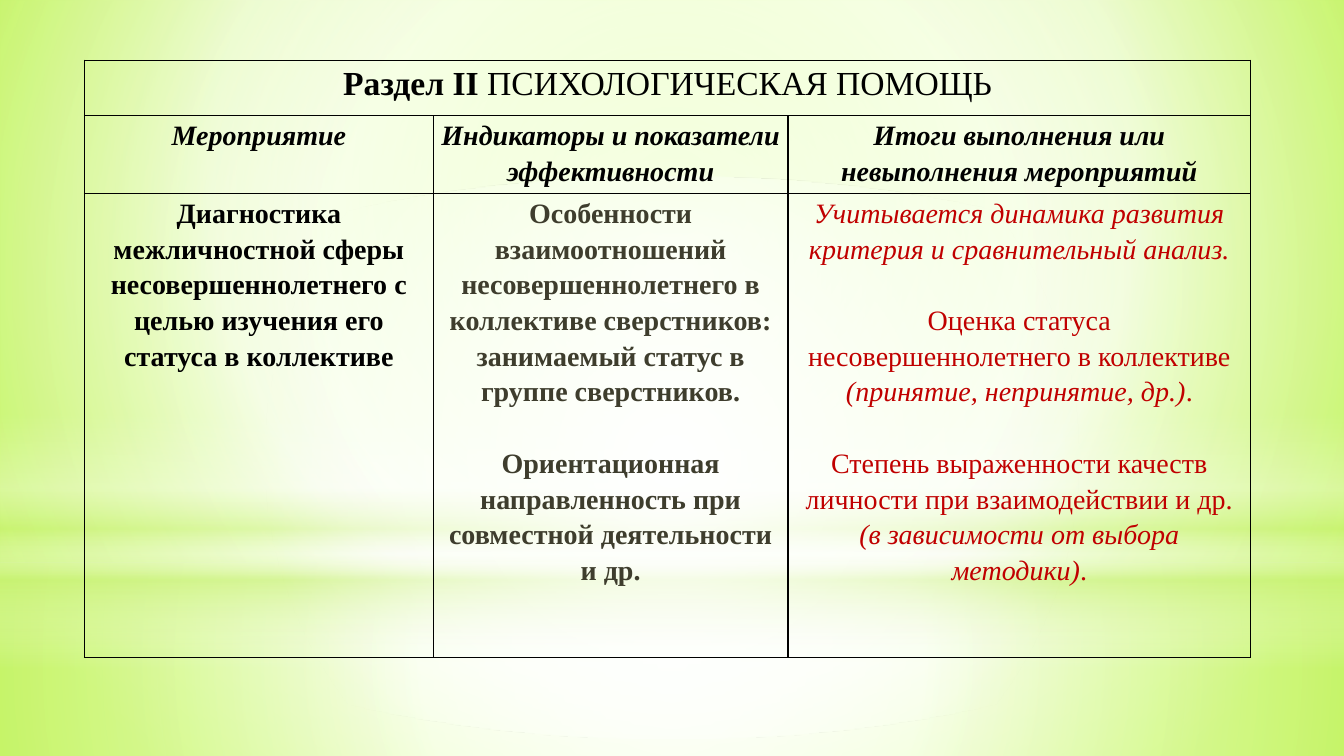
"""Builds a slide with a three-column table on psychological support."""
import pptx
import pptx.dml.color
import pptx.enum.shapes
import pptx.enum.text
import pptx.oxml
import pptx.oxml.ns
import pptx.util

Cm, Pt = pptx.util.Cm, pptx.util.Pt
SHAPE = pptx.enum.shapes.MSO_SHAPE

WIDTH, HEIGHT = 33.87, 19.05
FONT = "Times New Roman"
BLACK, GREY, RED = "000000", "3E3D2D", "C00000"
BLANK_LINE = 25.5

CIRCLE = '<a:path path="circle"><a:fillToRect l="{}000" t="{}000" r="{}000" b="{}000"/></a:path>'
CENTRE = CIRCLE.format(50, 50, 50, 50)
DOWN = '<a:lin ang="5400000" scaled="0"/>'

BACKDROP = [(0, "CAFF60", 100), (60, "F7FFE7", 100), (100, "B7FF29", 100)]
GLOWS = [
    (SHAPE.RECTANGLE, 14.17, 4.88, CENTRE,
     [(0, "FFFFFF", 91), (37, "FFFFFF", 76), (100, "CAF278", 79)]),
    (SHAPE.RECTANGLE, 0, 14.17, CENTRE,
     [(0, "FFFFFF", 89), (48, "FFFFFF", 62), (100, "CAF278", 79)]),
    (SHAPE.RECTANGLE, 10.46, 6.35, DOWN,
     [(0, "FFFFFF", 0), (29, "FFFFFF", 30), (45, "CAF278", 40),
      (55, "FFFFFF", 26), (65, "CAF278", 60), (100, "FFFFFF", 0)]),
    (SHAPE.OVAL, 4.45, 14.17, CENTRE, [(0, "FFFFFF", 100), (56, "FFFFFF", 0)]),
]

LEFT, TOP = 2.13, 1.52
COLS = [8.79, 8.94, 11.66]
ROWS = [1.4, 1.96, 11.68]

# Each cell: size, colour, paragraphs; each paragraph: blank line above, runs of (text, style).
CELLS = {
    (0, 0): (24, BLACK, [(False, [("Раздел II ", "b"), ("ПСИХОЛОГИЧЕСКАЯ ПОМОЩЬ", "")])]),
    (1, 0): (20, BLACK, [(False, [("Мероприятие", "bi")])]),
    (1, 1): (20, BLACK, [(False, [("Индикаторы и показатели эффективности", "bi")])]),
    (1, 2): (20, BLACK, [(False, [("Итоги выполнения или невыполнения мероприятий", "bi")])]),
    (2, 0): (20, BLACK, [
        (False, [("Диагностика межличностной сферы несовершеннолетнего "
                  "с целью изучения его статуса в коллективе", "b")])]),
    (2, 1): (20, GREY, [
        (False, [("Особенности взаимоотношений несовершеннолетнего "
                  "в коллективе сверстников:", "b")]),
        (False, [("занимаемый статус в группе сверстников.", "b")]),
        (True, [("Ориентационная направленность при совместной деятельности", "b")]),
        (False, [("и др.", "b")])]),
    (2, 2): (20, RED, [
        (False, [("Учитывается динамика развития критерия и сравнительный анализ.", "i")]),
        (True, [("Оценка статуса несовершеннолетнего в коллективе ", ""),
                ("(принятие, непринятие, др.)", "i"), (".", "")]),
        (True, [("Степень выраженности качеств личности при взаимодействии и др. ", ""),
                ("(в зависимости от выбора методики)", "i"), (".", "")])]),
}


def rgb(color):
    """Return the colour for a hex string."""
    return pptx.dml.color.RGBColor.from_string(color)


def xml(tag, attrs, body):
    """Return a drawing element."""
    ns = pptx.oxml.ns.nsdecls("a")
    return pptx.oxml.parse_xml(f"<a:{tag} {ns} {attrs}>{body}</a:{tag}>")


def set_gradient(fill, element, stops, direction):
    """Fill the element with a gradient."""
    fill.solid()
    fill.fore_color.rgb = rgb(stops[0][1])
    gs = "".join(f'<a:gs pos="{pos * 1000}"><a:srgbClr val="{color}">'
                 f'<a:alpha val="{alpha * 1000}"/></a:srgbClr></a:gs>'
                 for pos, color, alpha in stops)
    solid = next(element.iter(pptx.oxml.ns.qn("a:solidFill")))
    solid.getparent().replace(
        solid, xml("gradFill", 'rotWithShape="1"', f"<a:gsLst>{gs}</a:gsLst>{direction}"))


def set_borders(cell):
    """Draw a thin black line on every side of the cell."""
    cell.fill.background()
    tc_pr = cell._tc.get_or_add_tcPr()
    for i, side in enumerate("LRTB"):
        tc_pr.insert(i, xml(f"ln{side}", 'w="12700"',
                            f'<a:solidFill><a:srgbClr val="{BLACK}"/></a:solidFill>'))


def set_text(cell, size, color, paragraphs):
    """Write centred paragraphs into the cell."""
    cell.margin_left = cell.margin_right = Cm(0.18)
    cell.margin_top = cell.margin_bottom = 0
    tf = cell.text_frame
    for i, (gap, runs) in enumerate(paragraphs):
        p = tf.paragraphs[0] if i == 0 else tf.add_paragraph()
        p.alignment = pptx.enum.text.PP_ALIGN.CENTER
        p.line_spacing = 1.15
        if gap:
            p.space_before = Pt(BLANK_LINE)
        p.font.name, p.font.size = FONT, Pt(size)
        p.font.color.rgb = rgb(color)
        for text, style in runs:
            r = p.add_run()
            r.text = text
            font = p.font if len(runs) == 1 else r.font
            font.bold, font.italic = "b" in style, "i" in style


def main():
    """Build and save the slide."""
    prs = pptx.Presentation()
    prs.slide_width, prs.slide_height = Cm(WIDTH), Cm(HEIGHT)
    s = prs.slides.add_slide(prs.slide_layouts[6])
    set_gradient(s.background.fill, s.element, BACKDROP, CIRCLE.format(20, 10, 20, 60))

    for kind, top, height, direction, stops in GLOWS:
        sp = s.shapes.add_shape(kind, 0, Cm(top), Cm(WIDTH), Cm(height))
        sp.shadow.inherit = False
        sp.line.fill.background()
        set_gradient(sp.fill, sp.element, stops, direction)

    table = s.shapes.add_table(len(ROWS), len(COLS), Cm(LEFT), Cm(TOP),
                               Cm(sum(COLS)), Cm(sum(ROWS))).table
    table.first_row = table.horz_banding = False
    for col, width in zip(table.columns, COLS):
        col.width = Cm(width)
    for row, height in zip(table.rows, ROWS):
        row.height = Cm(height)
    for cell in table.iter_cells():
        set_borders(cell)
    table.cell(0, 0).merge(table.cell(0, len(COLS) - 1))
    for (row, col), content in CELLS.items():
        set_text(table.cell(row, col), *content)

    prs.save("out.pptx")


if __name__ == "__main__":
    main()
